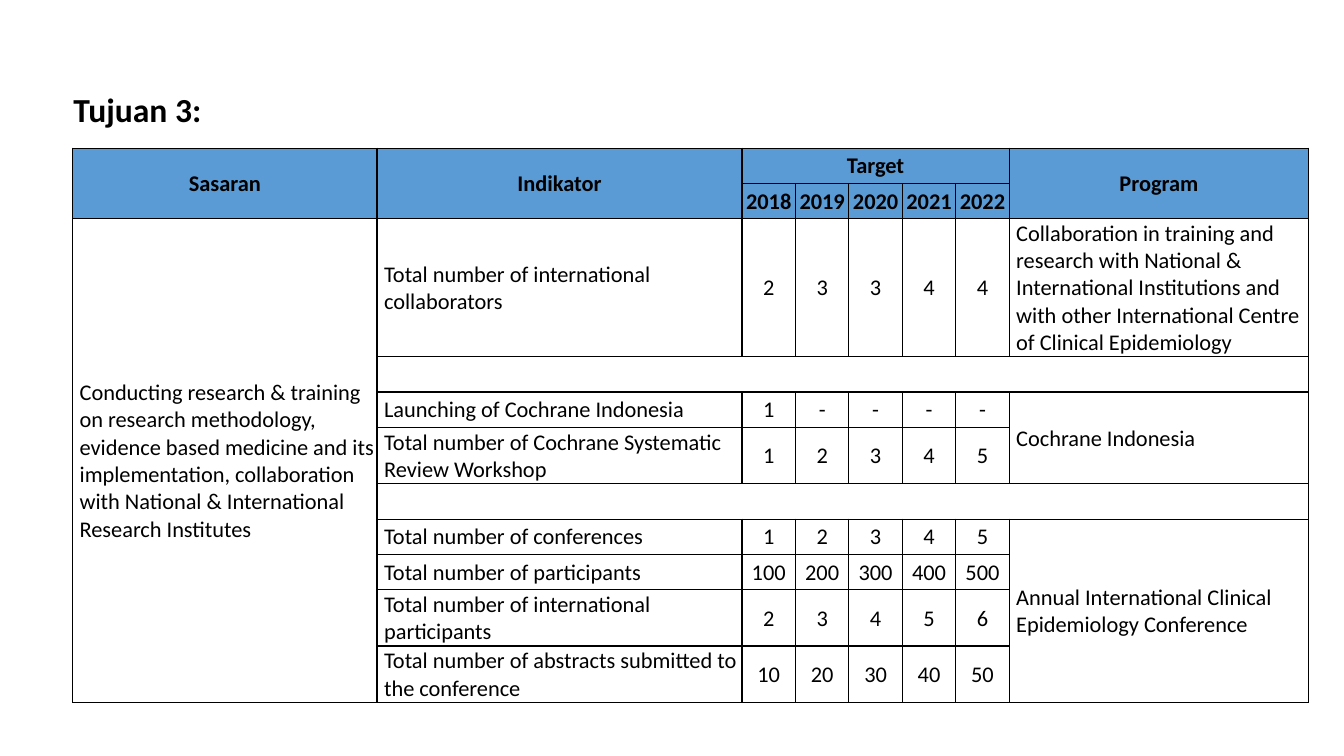
from lxml import etree
from pptx import Presentation
from pptx import util as u
from pptx.dml.color import RGBColor
from pptx.enum import text
from pptx.oxml.ns import qn

BLACK = RGBColor(0, 0, 0)
WHITE = RGBColor(255, 255, 255)
HEADER_BLUE = RGBColor(0x5B, 0x9B, 0xD5)
FONT = "Calibri"

COLUMNS = [3.02, 3.62] + [0.53] * 5 + [2.97]
LINE_ROW, PAIR_ROW, PROGRAM_ROW = 0.35, 0.56, 1.37
ROWS = [LINE_ROW] * 3 + [LINE_ROW] * 8
ROWS[2] = PROGRAM_ROW
for pair in (5, 9, 10):
    ROWS[pair] = PAIR_ROW
HEADER_ROWS = 2
SPACER_ROWS = (3, 6)
THIN_SPACER = 6
YEAR_COLUMNS = range(2, 7)
LAST_COLUMN = len(COLUMNS) - 1

# Row and column of the first and last cell of each merged block
MERGES = [
    (0, 0, 1, 0), (0, 1, 1, 1), (0, 2, 0, 6), (0, 7, 1, 7),
    (2, 0, 10, 0), (4, 7, 5, 7), (7, 7, 10, 7),
]
GOAL = ("Conducting research & training on research methodology, evidence based "
        "medicine and its implementation, collaboration with National & "
        "International Research Institutes")
COLLABORATION = ("Collaboration in training and research with National & "
                 "International Institutions and with other International "
                 "Centre of Clinical Epidemiology")
CONTENT = [
    ["Sasaran", "Indikator", "Target", "", "", "", "", "Program"],
    ["", "", "2018", "2019", "2020", "2021", "2022", ""],
    [GOAL, "Total number of international collaborators",
     "2", "3", "3", "4", "4", COLLABORATION],
    [""] * 8,
    ["", "Launching of Cochrane Indonesia",
     "1", "-", "-", "-", "-", "Cochrane Indonesia"],
    ["", "Total number of Cochrane Systematic Review Workshop",
     "1", "2", "3", "4", "5", ""],
    [""] * 8,
    ["", "Total number of conferences", "1", "2", "3", "4", "5",
     "Annual International Clinical Epidemiology Conference"],
    ["", "Total number of participants", "100", "200", "300", "400", "500", ""],
    ["", "Total number of international participants",
     "2", "3", "4", "5", "6", ""],
    ["", "Total number of abstracts submitted to the conference",
     "10", "20", "30", "40", "50", ""],
]


def border_widths(row, column):
    """Give the width in points of each side; zero means no line."""
    sides = {"L": 1, "R": 1, "T": 1, "B": 1}
    if row == THIN_SPACER and column:
        sides = dict.fromkeys(sides, 0.75)
    elif row == THIN_SPACER - 1 and column:
        sides["B"] = 0.75
    elif row == THIN_SPACER + 1 and column:
        sides["T"] = 0.75
    if row in SPACER_ROWS:
        if column > 1:
            sides["L"] = 0
        if 0 < column < LAST_COLUMN:
            sides["R"] = 0
    return sides


def set_borders(cell, sides):
    properties = cell._tc.get_or_add_tcPr()
    for side, width in sides.items():
        line = etree.SubElement(properties, qn(f"a:ln{side}"), w=str(u.Pt(width)))
        if width:
            fill = etree.SubElement(line, qn("a:solidFill"))
            etree.SubElement(fill, qn("a:srgbClr"), val=str(BLACK))
        else:
            etree.SubElement(line, qn("a:noFill"))


def set_cell(cell, row, column, wording):
    header = row < HEADER_ROWS
    set_borders(cell, border_widths(row, column))
    cell.fill.solid()
    cell.fill.fore_color.rgb = HEADER_BLUE if header else WHITE
    cell.vertical_anchor = text.MSO_ANCHOR.MIDDLE
    cell.margin_left = cell.margin_right = cell.margin_top = u.Inches(0.01)
    cell.margin_bottom = 0
    cell.text = wording
    paragraph = cell.text_frame.paragraphs[0]
    if header or column in YEAR_COLUMNS:
        paragraph.alignment = text.PP_ALIGN.CENTER
    else:
        paragraph._p.get_or_add_pPr().set("marL", str(u.Inches(0.06)))
    style_font(paragraph.font, 16, header)


def style_font(font, size, bold):
    font.name, font.size, font.bold = FONT, u.Pt(size), bold
    font.color.rgb = BLACK


def add_title(slide, left, top, width, height):
    title = slide.shapes.add_textbox(left, top, width, height).text_frame
    title.word_wrap = True
    title.vertical_anchor = text.MSO_ANCHOR.MIDDLE
    title.text = "Tujuan 3:"
    title.paragraphs[0].line_spacing = 0.9
    style_font(title.paragraphs[0].font, 24, True)


def add_targets(slide, left, top):
    targets = slide.shapes.add_table(
        len(ROWS), len(COLUMNS), left, top,
        u.Inches(sum(COLUMNS)), u.Inches(sum(ROWS))).table
    targets.first_row = targets.horz_banding = False
    for column, width in zip(targets.columns, COLUMNS):
        column.width = u.Inches(width)
    for row, height in zip(targets.rows, ROWS):
        row.height = u.Inches(height)
    for row, wordings in enumerate(CONTENT):
        for column, wording in enumerate(wordings):
            set_cell(targets.cell(row, column), row, column, wording)
    for top_row, left_column, bottom_row, right_column in MERGES:
        targets.cell(top_row, left_column).merge(
            targets.cell(bottom_row, right_column))


def main():
    deck = Presentation()
    deck.slide_width, deck.slide_height = u.Inches(13.33), u.Inches(7.5)
    slide = deck.slides.add_slide(deck.slide_layouts[6])
    add_title(slide, u.Inches(0.63), u.Inches(0.38), u.Inches(11.5), u.Inches(1.45))
    add_targets(slide, u.Inches(0.72), u.Inches(1.47))
    deck.save("out.pptx")


if __name__ == "__main__":
    main()
